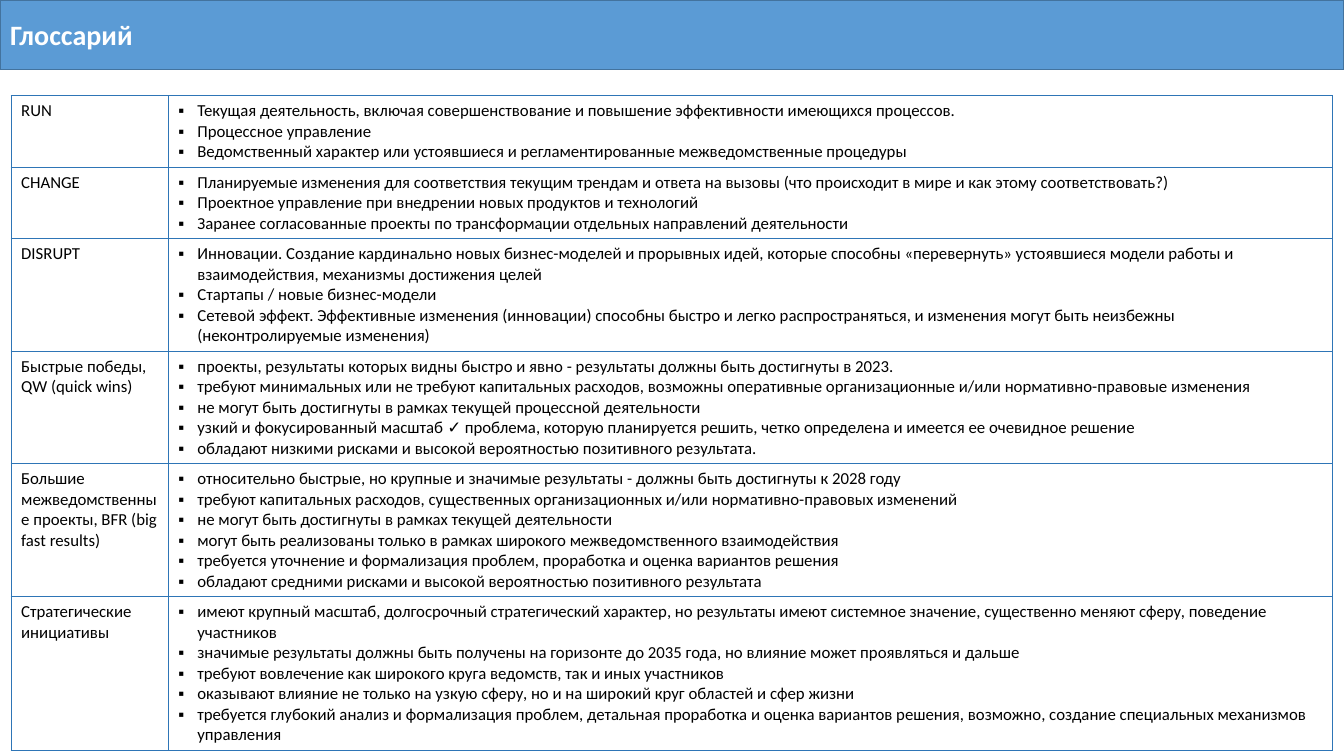
import pptx
import pptx.dml.color
import pptx.enum.text
import pptx.oxml
import pptx.oxml.ns
import pptx.util
from pptx.util import Cm

COLORS = {
    "header": "5B9BD5",
    "header_line": "43739E",
    "border": "2E75B6",
    "white": "FFFFFF",
    "text": "000000",
}
FONT = "Calibri"
LINE_HEIGHT, CELL_PADDING = 0.51, 0.25  # centimetres

# Term, number of text lines in its row, definitions
GLOSSARY = [
    ("RUN", 3, [
        "Текущая деятельность, включая совершенствование и повышение эффективности имеющихся процессов.",
        "Процессное управление",
        "Ведомственный характер или устоявшиеся и регламентированные межведомственные процедуры",
    ]),
    ("CHANGE", 3, [
        "Планируемые изменения для соответствия текущим трендам и ответа на вызовы "
        "(что происходит в мире и как этому соответствовать?)",
        "Проектное управление при внедрении новых продуктов и технологий",
        "Заранее согласованные проекты по трансформации отдельных направлений деятельности",
    ]),
    ("DISRUPT", 5, [
        "Инновации. Создание кардинально новых бизнес-моделей и прорывных идей, которые способны "
        "«перевернуть» устоявшиеся модели работы и взаимодействия, механизмы достижения целей",
        "Стартапы / новые бизнес-модели",
        "Сетевой эффект. Эффективные изменения (инновации) способны быстро и легко распространяться, "
        "и изменения могут быть неизбежны (неконтролируемые изменения)",
    ]),
    ("Быстрые победы, QW (quick wins)", 5, [
        "проекты, результаты которых видны быстро и явно - результаты должны быть достигнуты в 2023.",
        "требуют минимальных или не требуют капитальных расходов, возможны оперативные "
        "организационные и/или нормативно-правовые изменения",
        "не могут быть достигнуты в рамках текущей процессной деятельности",
        "узкий и фокусированный масштаб ✓ проблема, которую планируется решить, четко определена "
        "и имеется ее очевидное решение",
        "обладают низкими рисками и высокой вероятностью позитивного результата.",
    ]),
    ("Большие межведомственные проекты, BFR (big fast results)", 6, [
        "относительно быстрые, но крупные и значимые результаты - должны быть достигнуты к 2028 году",
        "требуют капитальных расходов, существенных организационных и/или нормативно-правовых изменений",
        "не могут быть достигнуты в рамках текущей деятельности",
        "могут быть реализованы только в рамках широкого межведомственного взаимодействия",
        "требуется уточнение и формализация проблем, проработка и оценка вариантов решения",
        "обладают средними рисками и высокой вероятностью позитивного результата",
    ]),
    ("Стратегические инициативы", 7, [
        "имеют крупный масштаб, долгосрочный стратегический характер, но результаты имеют системное "
        "значение, существенно меняют сферу, поведение участников",
        "значимые результаты должны быть получены на горизонте до 2035 года, но влияние может "
        "проявляться и дальше",
        "требуют вовлечение как широкого круга ведомств, так и иных участников",
        "оказывают влияние не только на узкую сферу, но и на широкий круг областей и сфер жизни",
        "требуется глубокий анализ и формализация проблем, детальная проработка и оценка вариантов "
        "решения, возможно, создание специальных механизмов управления",
    ]),
]


def add_run(paragraph, text, size, color, bold=False):
    run = paragraph.add_run()
    run.text = text
    run.font.name = FONT
    run.font.size = pptx.util.Pt(size)
    run.font.bold = bold
    run.font.color.rgb = pptx.dml.color.RGBColor.from_string(COLORS[color])


def add_xml(parent, index, xml):
    """Insert a DrawingML element, written without its namespace, at a position."""
    tag, rest = xml[1:].split(" ", 1)
    namespace = pptx.oxml.ns.nsdecls("a")
    parent.insert(index, pptx.oxml.parse_xml(f"<{tag} {namespace} {rest}"))


presentation = pptx.Presentation()
presentation.slide_width = Cm(33.87)
presentation.slide_height = Cm(19.05)
slide = presentation.slides.add_slide(presentation.slide_layouts[5])

# Header bar
title = slide.shapes.title
title.left, title.top = Cm(0), Cm(0)
title.width, title.height = presentation.slide_width, Cm(1.75)
title.fill.solid()
title.fill.fore_color.rgb = pptx.dml.color.RGBColor.from_string(COLORS["header"])
title.line.color.rgb = pptx.dml.color.RGBColor.from_string(COLORS["header_line"])
title.line.width = pptx.util.Pt(1)
title.text_frame.auto_size = pptx.enum.text.MSO_AUTO_SIZE.NONE
title.text_frame.vertical_anchor = pptx.enum.text.MSO_ANCHOR.MIDDLE
title_paragraph = title.text_frame.paragraphs[0]
title_paragraph.alignment = pptx.enum.text.PP_ALIGN.LEFT
add_run(title_paragraph, "Глоссарий", 20, "white", bold=True)

# Glossary table
row_heights = [Cm(lines * LINE_HEIGHT + CELL_PADDING) for _, lines, _ in GLOSSARY]
table = slide.shapes.add_table(
    len(GLOSSARY), 2, Cm(0.28), Cm(2.41), Cm(33.3), sum(row_heights)
).table
table.first_row = False
table.horz_banding = False
table.columns[0].width = Cm(3.96)
table.columns[1].width = Cm(29.34)

for row, height, (term, _, definitions) in zip(table.rows, row_heights, GLOSSARY):
    row.height = height
    term_cell, definition_cell = row.cells
    add_run(term_cell.text_frame.paragraphs[0], term, 12, "text")

    for number, definition in enumerate(definitions):
        frame = definition_cell.text_frame
        paragraph = frame.add_paragraph() if number else frame.paragraphs[0]
        add_run(paragraph, definition, 12, "text")
        properties = paragraph._p.get_or_add_pPr()
        properties.set("marL", str(Cm(0.48)))
        properties.set("indent", str(-Cm(0.48)))
        add_xml(properties, 0, '<buFont typeface="Arial"/>'.replace("<buFont", "<a:buFont"))
        add_xml(properties, 1, '<a:buChar char="▪"/>')

    for cell in (term_cell, definition_cell):
        cell.fill.background()
        for index, side in enumerate("LRTB"):
            add_xml(
                cell._tc.get_or_add_tcPr(), index,
                f'<a:ln{side} w="{pptx.util.Pt(1)}"><a:solidFill>'
                f'<a:srgbClr val="{COLORS["border"]}"/></a:solidFill></a:ln{side}>',
            )

presentation.save("out.pptx")
